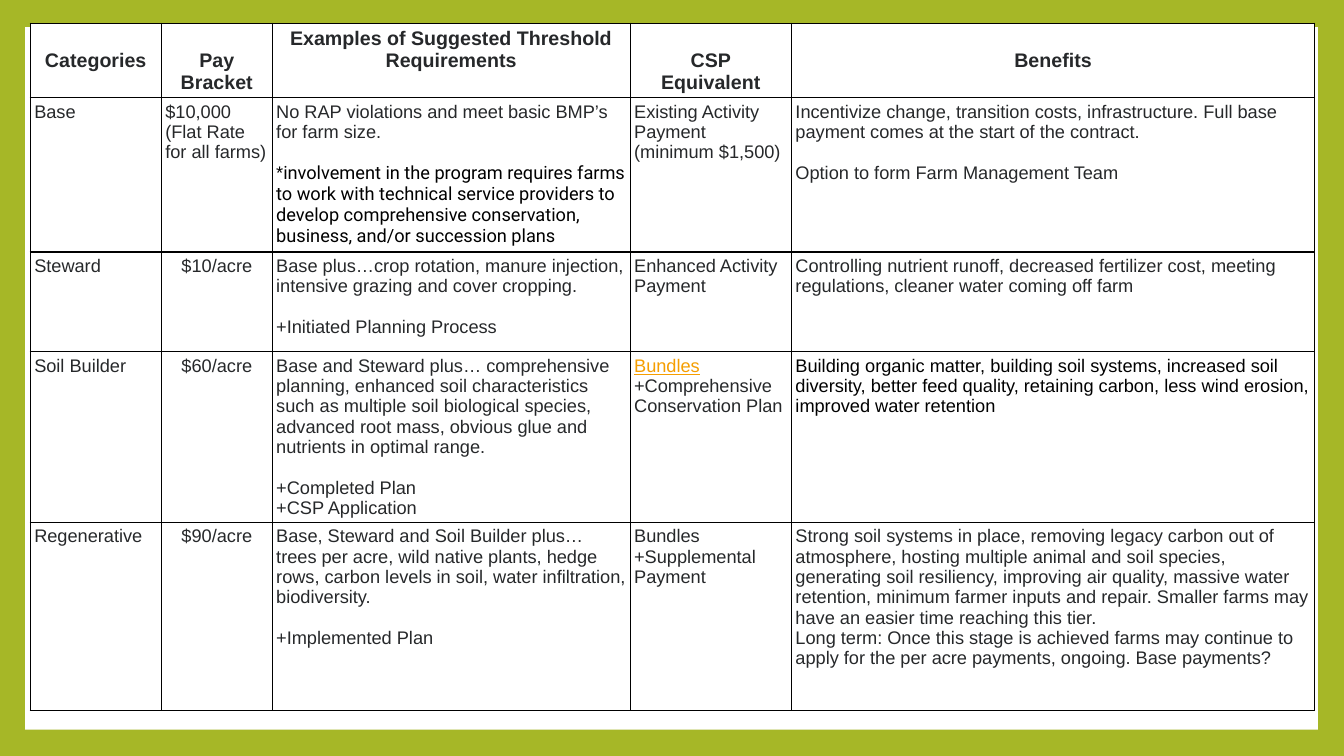
"""Build a slide with a table of farm payment tiers."""
from lxml.etree import SubElement as Sub
from pptx import Presentation
from pptx.dml.color import RGBColor as Rgb
from pptx.enum.shapes import MSO_SHAPE as Shape
from pptx.enum.text import PP_ALIGN as Align
from pptx.oxml.ns import qn
from pptx.util import Inches, Pt

INK, BLACK, WHITE, GREEN, GOLD = "26282A", "000000", "FFFFFF", "A6B727", "F59E00"
COLS = [1.3, 1.1, 3.55, 1.6, 5.19]
ROWS = [0.74, 1.53, 0.99, 1.69, 1.87]
HEADS = [
    "Categories",
    "Pay Bracket",
    "Examples of Suggested Threshold Requirements",
    "CSP\nEquivalent",
    "Benefits",
]
TIERS = [
    [
        "Base",
        "$10,000 (Flat Rate for all farms)",
        "No RAP violations and meet basic BMP’s for farm size.\n\n"
        "*|involvement in the program requires farms to work with technical service "
        "providers to develop comprehensive conservation, business, and/or succession plans",
        "Existing Activity Payment (minimum $1,500)",
        "Incentivize change, transition costs, infrastructure. Full base payment comes "
        "at the start of the contract.\n\nOption to form Farm Management Team",
    ],
    [
        "Steward",
        "$10/acre",
        "Base plus…crop rotation, manure injection, intensive grazing and cover cropping."
        "\n\n+Initiated Planning Process",
        "Enhanced Activity Payment",
        "Controlling nutrient runoff, decreased fertilizer cost, meeting regulations, "
        "cleaner water coming off farm",
    ],
    [
        "Soil Builder",
        "$60/acre",
        "Base and Steward plus… comprehensive planning, enhanced soil characteristics "
        "such as multiple soil biological species, advanced root mass, obvious glue and "
        "nutrients in optimal range.\n\n+Completed Plan\n+CSP Application",
        "Bundles| +Comprehensive Conservation Plan",
        "Building organic matter, building soil systems, increased soil diversity, better "
        "feed quality, retaining carbon, less wind erosion, improved water retention",
    ],
    [
        "Regenerative",
        "$90/acre",
        "Base, Steward and Soil Builder plus… trees per acre, wild native plants, hedge "
        "rows, carbon levels in soil, water infiltration, biodiversity."
        "\n\n+Implemented Plan",
        "Bundles +Supplemental Payment",
        "Strong soil systems in place, removing legacy carbon out of atmosphere, hosting "
        "multiple animal and soil species, generating soil resiliency, improving air "
        "quality, massive water retention, minimum farmer inputs and repair. Smaller farms "
        "may have an easier time reaching this tier.\nLong term: Once this stage is "
        "achieved farms may continue to apply for the per acre payments, ongoing. "
        "Base payments?",
    ],
]


def paint(part, tone):
    part.solid()
    part.fore_color.rgb = Rgb.from_string(tone)


class Page:
    def __init__(self, deck, back):
        self.slide = deck.slides.add_slide(deck.slide_layouts[6])
        self.font = "Arial"
        self.pad = 0.04
        self.gap = Pt(14.5)
        paint(self.slide.background.fill, back)

    def panel(self, x, y, w, h, tone):
        box = self.slide.shapes.add_shape(
            Shape.RECTANGLE, Inches(x), Inches(y), Inches(w), Inches(h))
        box.shadow.inherit = False
        paint(box.fill, tone)
        box.line.fill.background()

    def table(self, x, y, cols, rows):
        grid = self.slide.shapes.add_table(
            len(rows), len(cols), Inches(x), Inches(y),
            Inches(sum(cols)), Inches(sum(rows))).table
        for col, w in zip(grid.columns, cols):
            col.width = Inches(w)
        for row, h in zip(grid.rows, rows):
            row.height = Inches(h)
        return grid

    def cell(self, cell, text, size, bold=False, mid=False, drop=0):
        cell.margin_left = cell.margin_right = cell.margin_bottom = Inches(self.pad)
        cell.margin_top = Inches(self.pad + drop)
        self.edge(cell)
        paint(cell.fill, WHITE)
        frame = cell.text_frame
        for i, block in enumerate(text.split("\n\n")):
            for j, line in enumerate(block.split("\n")):
                para = frame.add_paragraph() if i or j else frame.paragraphs[0]
                para.alignment = Align.CENTER if mid else Align.LEFT
                para.space_before = self.gap if i and not j else Pt(0)
                for part in line.split("|"):
                    para.add_run().text = part
                font = para.font
                font.name, font.size, font.bold = self.font, Pt(size), bold
                font.color.rgb = Rgb.from_string(INK)

    def edge(self, cell):
        props = cell._tc.get_or_add_tcPr()
        for side in ("lnL", "lnR", "lnT", "lnB"):
            line = Sub(props, qn("a:" + side), w=str(Pt(1)))
            Sub(Sub(line, qn("a:solidFill")), qn("a:srgbClr"), val=BLACK)


def main():
    deck = Presentation()
    deck.slide_width, deck.slide_height = Inches(13.33), Inches(7.5)
    page = Page(deck, GREEN)
    page.panel(0.25, 0.27, 12.82, 6.97, WHITE)
    grid = page.table(0.3, 0.23, COLS, ROWS)
    for c, head in enumerate(HEADS):
        page.cell(grid.cell(0, c), head, 14, bold=True, mid=True,
                  drop=0 if c == 2 else 0.22)
    for r, tier in enumerate(TIERS, 1):
        for c, text in enumerate(tier):
            page.cell(grid.cell(r, c), text, 13, mid=c == 1 and r > 1)

    note = grid.cell(1, 2).text_frame.paragraphs[1]
    gain = grid.cell(3, 4).text_frame.paragraphs[0]
    for para in (note, gain):
        para.font.color.rgb = Rgb.from_string(BLACK)
    note.runs[1].font.name = "Roboto"
    link = grid.cell(3, 3).text_frame.paragraphs[0].runs[0].font
    link.color.rgb = Rgb.from_string(GOLD)
    link.underline = True
    deck.save("out.pptx")


if __name__ == "__main__":
    main()
